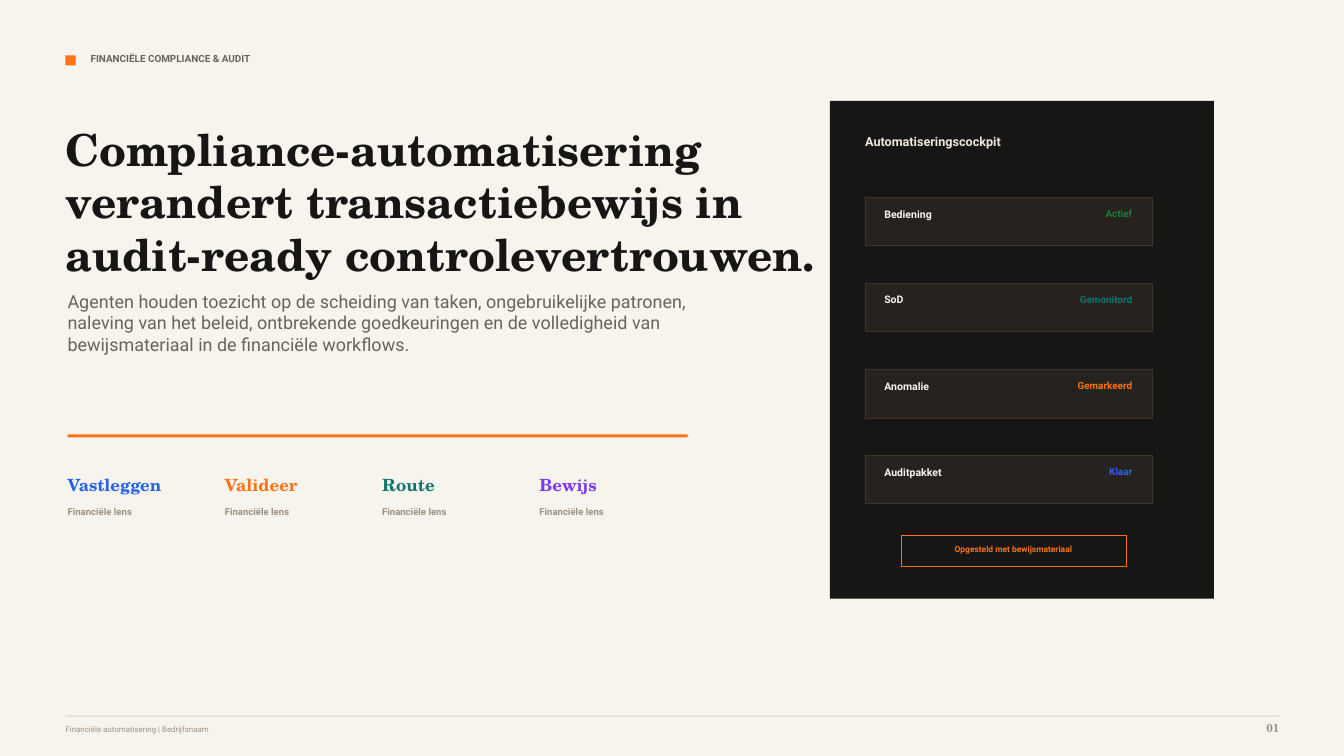
import pptx
import pptx.dml.color
import pptx.enum.shapes
import pptx.enum.text
import pptx.util
from dataclasses import dataclass

PX = 9144  # EMU per px, 100 px to the inch
SLIDE_WIDTH, SLIDE_HEIGHT = 1333, 750


@dataclass(frozen=True)
class Theme:
    sans: str = "Roboto"
    serif: str = "TeX Gyre Schola"
    paper: str = "F7F4EE"
    ink: str = "171614"
    body: str = "69635A"
    muted: str = "9A9184"
    hairline: str = "D9D0C3"
    cockpit_title: str = "EDE7DD"
    row_fill: str = "26231F"
    row_line: str = "3C362E"
    orange: str = "F97316"
    blue: str = "2563EB"
    teal: str = "0F766E"
    violet: str = "7C3AED"
    green: str = "15803D"
    headline_size: float = 31.5
    intro_size: float = 12.8
    lens_size: float = 12
    cockpit_size: float = 9
    page_size: float = 8.2
    row_size: float = 7.5
    small_size: float = 7.1
    caption_size: float = 6.8
    badge_size: float = 6
    footer_size: float = 5.6
    line_width: float = 0.75


THEME = Theme()


def rgb(color):
    return pptx.dml.color.RGBColor.from_string(color)


def box(at):
    return [pptx.util.Emu(length * PX) for length in at]


def add_block(slide, at, fill=None, line=None):
    block = slide.shapes.add_shape(pptx.enum.shapes.MSO_SHAPE.RECTANGLE, *box(at))
    block.shadow.inherit = False
    if fill:
        block.fill.solid()
        block.fill.fore_color.rgb = rgb(fill)
    else:
        block.fill.background()
    if line:
        block.line.color.rgb = rgb(line)
        block.line.width = pptx.util.Pt(THEME.line_width)
    else:
        block.line.fill.background()


def add_text(slide, at, text, *, size, color, face=THEME.sans, bold=True, align="LEFT"):
    frame = slide.shapes.add_textbox(*box(at)).text_frame
    frame.word_wrap = True
    frame.margin_left = frame.margin_right = frame.margin_top = frame.margin_bottom = 0
    paragraph = frame.paragraphs[0]
    paragraph.alignment = pptx.enum.text.PP_ALIGN[align]
    run = paragraph.add_run()
    run.text = text
    run.font.name = face
    run.font.size = pptx.util.Pt(size)
    run.font.bold = bold
    run.font.color.rgb = rgb(color)


def add_lens(slide, left, title, color):
    add_text(slide, (left, 471, 125, 21), title,
             size=THEME.lens_size, color=color, face=THEME.serif)
    add_text(slide, (left, 502, 115, 17), "Financiële lens",
             size=THEME.caption_size, color=THEME.muted)


def add_status_row(slide, top, control, status, color):
    add_block(slide, (858, top, 285, 48), THEME.row_fill, THEME.row_line)
    add_text(slide, (877, top + 10, 135, 17), control,
             size=THEME.row_size, color=THEME.paper)
    add_text(slide, (1023, top + 10, 100, 17), status,
             size=THEME.small_size, color=color, align="RIGHT")


def add_introduction(slide):
    add_block(slide, (65, 55, 10, 10), THEME.orange)
    add_text(slide, (90, 52, 583, 19), "FINANCIËLE COMPLIANCE & AUDIT",
             size=THEME.small_size, color=THEME.body)
    add_text(slide, (65, 121, 771, 131),
             "Compliance-automatisering verandert transactiebewijs in "
             "audit-ready controlevertrouwen.",
             size=THEME.headline_size, color=THEME.ink, face=THEME.serif)
    add_text(slide, (67, 288, 646, 92),
             "Agenten houden toezicht op de scheiding van taken, ongebruikelijke "
             "patronen, naleving van het beleid, ontbrekende goedkeuringen en de "
             "volledigheid van bewijsmateriaal in de financiële workflows.",
             size=THEME.intro_size, color=THEME.body, bold=False)
    add_block(slide, (67, 431, 615, 3), THEME.orange)


def add_lenses(slide):
    lenses = [("Vastleggen", THEME.blue), ("Valideer", THEME.orange),
              ("Route", THEME.teal), ("Bewijs", THEME.violet)]
    for index, (title, color) in enumerate(lenses):
        add_lens(slide, 67 + 156 * index, title, color)


def add_cockpit(slide):
    add_block(slide, (823, 100, 381, 494), THEME.ink)
    add_text(slide, (858, 133, 229, 25), "Automatiseringscockpit",
             size=THEME.cockpit_size, color=THEME.cockpit_title)

    # Four rows spread evenly between the first and last top edge
    rows = [("Bediening", "Actief", THEME.green),
            ("SoD", "Gemonitord", THEME.teal),
            ("Anomalie", "Gemarkeerd", THEME.orange),
            ("Auditpakket", "Klaar", THEME.blue)]
    first_top, last_top = 196, 452
    for index, row in enumerate(rows):
        top = first_top + round(index * (last_top - first_top) / (len(rows) - 1))
        add_status_row(slide, top, *row)

    # Evidence badge
    add_block(slide, (894, 531, 223, 31), line=THEME.orange)
    add_text(slide, (906, 540, 198, 14), "Opgesteld met bewijsmateriaal",
             size=THEME.badge_size, color=THEME.orange, align="CENTER")


def add_footer(slide):
    add_block(slide, (65, 710, 1204, 1), THEME.hairline)
    add_text(slide, (65, 719, 792, 15), "Financiële automatisering | Bedrijfsnaam",
             size=THEME.footer_size, color=THEME.muted, bold=False)
    add_text(slide, (1219, 715, 50, 19), "01", size=THEME.page_size,
             color=THEME.muted, face=THEME.serif, align="RIGHT")


def main():
    deck = pptx.Presentation()
    deck.slide_width = pptx.util.Emu(SLIDE_WIDTH * PX)
    deck.slide_height = pptx.util.Emu(SLIDE_HEIGHT * PX)
    slide = deck.slides.add_slide(deck.slide_layouts[6])

    # Paper background
    add_block(slide, (0, 0, SLIDE_WIDTH, SLIDE_HEIGHT), THEME.paper)

    # Message on the left
    add_introduction(slide)
    add_lenses(slide)

    # Status panel on the right
    add_cockpit(slide)

    add_footer(slide)
    deck.save("out.pptx")


if __name__ == "__main__":
    main()
